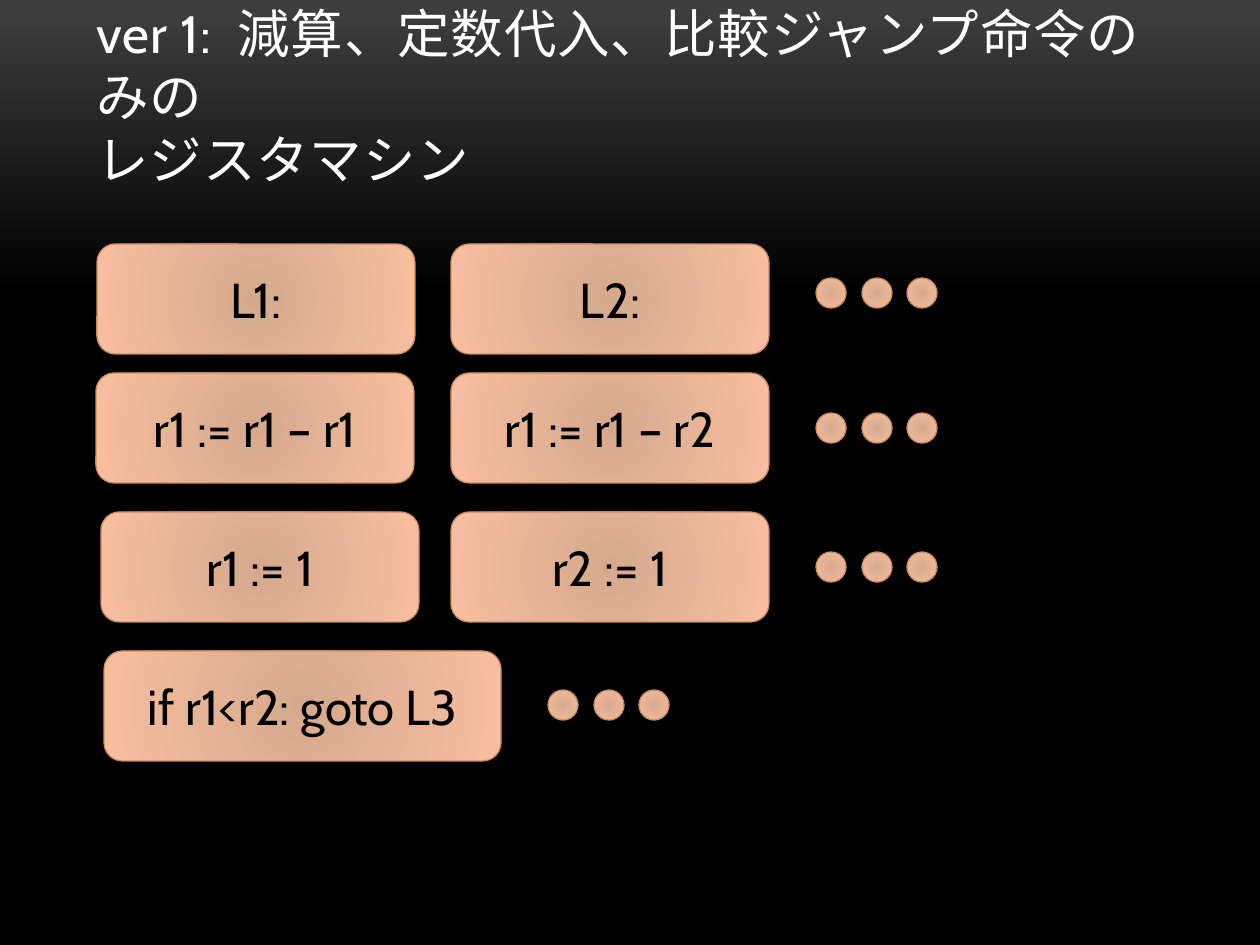
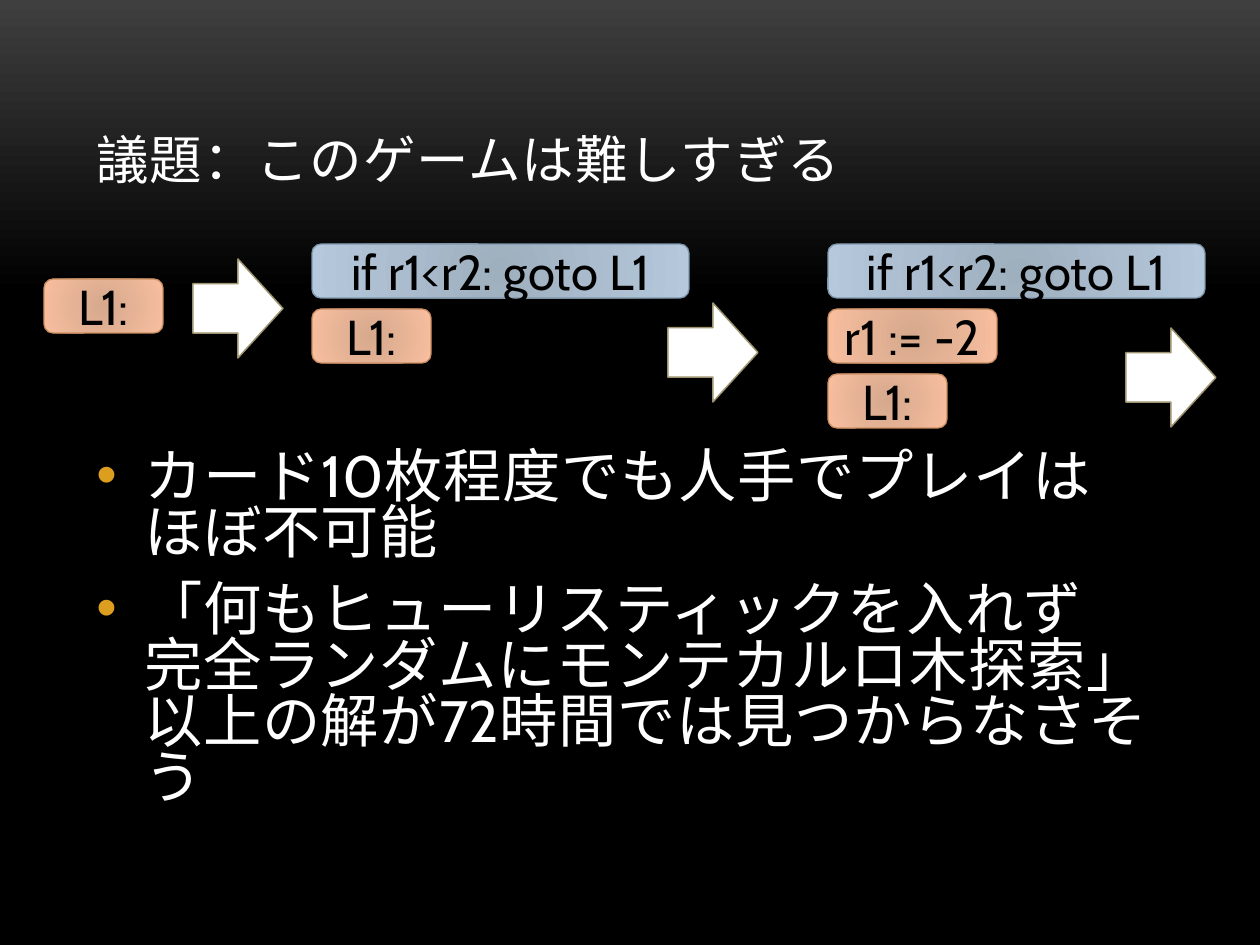
from lxml import etree
from pptx import Presentation
from pptx.dml.color import RGBColor
from pptx.enum.shapes import MSO_SHAPE as SHAPE
from pptx.enum.text import MSO_ANCHOR as ANCHOR, MSO_AUTO_SIZE as AUTO, PP_ALIGN as ALIGN
from pptx.oxml import parse_xml
from pptx.oxml.ns import nsdecls, qn
from pptx.util import Pt

# Shared look
PX = 914400 / 126
FONT = "Cabin"
COLORS = {
    "white": "FFFFFF", "black": "000000", "glow": "3F3F3F",
    "bullet": "DC9E1F", "arrow_line": "9D936F",
    "orange_in": "D6A98D", "orange_out": "F8BE9F", "orange_line": "CC8E60",
    "blue_in": "9EAFBE", "blue_out": "B5C8DC", "blue_line": "7E97AD",
}
TITLE_BOX = (84, 38, 1092, 158)
CIRCLE = '<a:path path="circle"><a:fillToRect l="100000" t="100000" r="100000" b="100000"/></a:path>'
DOWNWARD = '<a:lin ang="5400000" scaled="0"/>'

# Slide 1: instruction cards, each row ending in three dots
MACHINE_TITLE = "ver 1:  減算、定数代入、比較ジャンプ命令のみの\vレジスタマシン"
CARD_H = 110
# row top, dots (left, top), cards (left, width, text)
CARD_ROWS = [
    (244, (816, 278), [(97, 318, "L1:"), (451, 318, "L2:")]),
    (373, (816, 413), [(96, 318, "r1 := r1 – r1"), (451, 318, "r1 := r1 – r2")]),
    (512, (816, 552), [(101, 318, "r1 := 1"), (451, 318, "r2 := 1")]),
    (651, (548, 690), [(104, 397, "if r1<r2: goto L3")]),
]
DOT = 30
DOT_STEPS = (0, 46, 91)

# Slide 2: growing stacks of cards, each followed by an arrow
GAME_TITLE = "議題：このゲームは難しすぎる"
SMALL_H, STACK_STEP = 54, 65
LABEL = (119, "orange", "L1:")
JUMP = (377, "blue", "if r1<r2: goto L1")
ASSIGN = (169, "orange", "r1 := -2")
# stack (left, top), cards (width, hue, text), arrow (left, top)
STACKS = [
    ((44, 279), [LABEL], (193, 259)),
    ((312, 244), [JUMP, LABEL], (668, 303)),
    ((828, 244), [JUMP, ASSIGN, LABEL], (1126, 328)),
]
ARROW_SIZE = (90, 99)
POINTS_BOX = (84, 447, 1092, 324)
POINTS = [
    "カード10枚程度でも人手でプレイは\vほぼ不可能",
    "「何もヒューリスティックを入れず\v完全ランダムにモンテカルロ木探索」\v以上の解が72時間では見つからなさそう",
]


def px(*values):
    return [round(v * PX) for v in values]


def rgb(name):
    return RGBColor.from_string(COLORS[name])


def set_gradient(fill, owner, stops, geometry):
    fill.gradient()
    old = owner.find(".//" + qn("a:gradFill"))
    gs = "".join(f'<a:gs pos="{pos * 1000}"><a:srgbClr val="{COLORS[c]}"/></a:gs>'
                 for pos, c in stops)
    new = parse_xml(f'<a:gradFill {nsdecls("a")} rotWithShape="1">'
                    f'<a:gsLst>{gs}</a:gsLst>{geometry}</a:gradFill>')
    old.getparent().replace(old, new)


def format_runs(p, size, color, spacing=0):
    for r in p.runs:
        r.font.name, r.font.size = FONT, Pt(size)
        r.font.color.rgb = rgb(color)
        if spacing:
            r.font._element.set("spc", str(spacing))


def add_title_slide(prs, title):
    s = prs.slides.add_slide(prs.slide_layouts[5])
    sp = s.shapes.title
    sp.left, sp.top, sp.width, sp.height = px(*TITLE_BOX)
    tf = sp.text_frame
    tf.text = title
    tf.auto_size, tf.vertical_anchor, tf.word_wrap = AUTO.NONE, ANCHOR.BOTTOM, True
    p = tf.paragraphs[0]
    p.alignment = ALIGN.LEFT
    format_runs(p, 30, "white", 50)
    return s


def add_shaded(shapes, kind, box, hue):
    sp = shapes.add_shape(kind, *px(*box))
    sp.shadow.inherit = False
    set_gradient(sp.fill, sp._element, [(0, hue + "_in"), (100, hue + "_out")], CIRCLE)
    sp.line.color.rgb = rgb(hue + "_line")
    sp.line.width = Pt(0.75)
    return sp


def add_card(s, box, text, hue="orange"):
    tf = add_shaded(s.shapes, SHAPE.ROUNDED_RECTANGLE, box, hue).text_frame
    tf.text = text
    tf.vertical_anchor = ANCHOR.MIDDLE
    p = tf.paragraphs[0]
    p.alignment = ALIGN.CENTER
    format_runs(p, 28, "black")


def add_dots(s, left, top):
    group = s.shapes.add_group_shape()
    for step in DOT_STEPS:
        add_shaded(group.shapes, SHAPE.OVAL, (left + step, top, DOT, DOT), "orange")


def add_arrow(s, left, top):
    sp = s.shapes.add_shape(SHAPE.RIGHT_ARROW, *px(left, top, *ARROW_SIZE))
    sp.shadow.inherit = False
    sp.fill.solid()
    sp.fill.fore_color.rgb = rgb("white")
    sp.line.color.rgb = rgb("arrow_line")
    sp.line.width = Pt(0.85)


def add_points(s):
    tf = s.shapes.add_textbox(*px(*POINTS_BOX)).text_frame
    tf.word_wrap = True
    for i, text in enumerate(POINTS):
        p = tf.paragraphs[0] if i == 0 else tf.add_paragraph()
        p.text = text
        p.line_spacing = 0.8
        p.space_before, p.space_after = Pt(6 if i else 0), Pt(6)
        pPr = p._p.get_or_add_pPr()
        indent = px(48)[0]
        pPr.set("marL", str(indent))
        pPr.set("indent", str(-indent))
        color = etree.SubElement(pPr, qn("a:buClr"))
        etree.SubElement(color, qn("a:srgbClr"), val=COLORS["bullet"])
        etree.SubElement(pPr, qn("a:buFont"), typeface="Arial")
        etree.SubElement(pPr, qn("a:buChar"), char="•")
        format_runs(p, 33.3, "white", 30)


def main():
    prs = Presentation()
    prs.slide_width, prs.slide_height = px(1260, 945)
    master = prs.slide_master
    set_gradient(master.background.fill, master._element.cSld.bg,
                 [(0, "glow"), (31, "black"), (100, "black")], DOWNWARD)

    # Slide 1
    s = add_title_slide(prs, MACHINE_TITLE)
    for top, dots, cards in CARD_ROWS:
        for left, width, text in cards:
            add_card(s, (left, top, width, CARD_H), text)
        add_dots(s, *dots)

    # Slide 2
    s = add_title_slide(prs, GAME_TITLE)
    add_points(s)
    for (left, top), cards, arrow in STACKS:
        for i, (width, hue, text) in enumerate(cards):
            add_card(s, (left, top + i * STACK_STEP, width, SMALL_H), text, hue)
        add_arrow(s, *arrow)

    prs.save("out.pptx")


if __name__ == "__main__":
    main()
